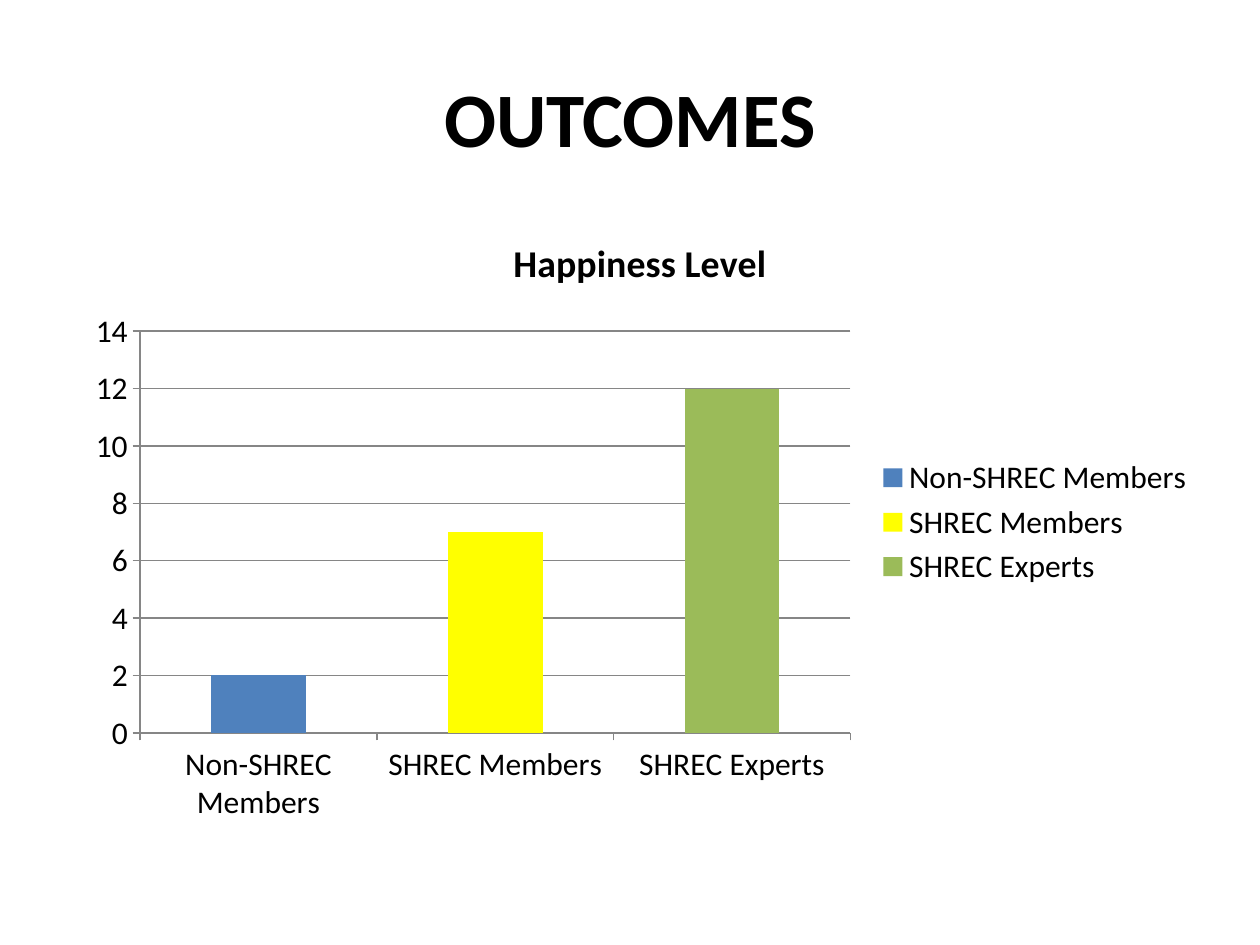
from dataclasses import dataclass

from pptx import Presentation
from pptx.chart.data import CategoryChartData
from pptx.dml.color import RGBColor
from pptx.enum.chart import XL_CHART_TYPE, XL_LEGEND_POSITION, XL_TICK_MARK
from pptx.enum.text import MSO_ANCHOR, PP_ALIGN
from pptx.util import Inches, Pt


@dataclass(frozen=True)
class Theme:
    font: str = "Calibri"
    text: str = "000000"
    line: str = "868686"
    title_size: float = 44
    chart_title_size: float = 21.6
    chart_size: float = 18


@dataclass(frozen=True)
class Bar:
    label: str
    value: int
    color: str


THEME = Theme()
BARS = [
    Bar("Non-SHREC Members", 2, "4F81BD"),
    Bar("SHREC Members", 7, "FFFF00"),
    Bar("SHREC Experts", 12, "9BBB59"),
]


def style_font(font, size: float, bold: bool = False) -> None:
    for name, value in {"name": THEME.font, "size": Pt(size), "bold": bold}.items():
        setattr(font, name, value)
    font.color.rgb = RGBColor.from_string(THEME.text)


def style_line(line) -> None:
    line.color.rgb = RGBColor.from_string(THEME.line)
    line.width = Pt(0.75)


def place(box, left: float, top: float, width: float, height: float) -> None:
    lengths = {"left": left, "top": top, "width": width, "height": height}
    for name, value in lengths.items():
        setattr(box, name, Inches(value))


def add_title(page, text: str) -> None:
    box = page.shapes.title
    place(box, 0.5, 0.3, 9, 1.25)
    box.text_frame.vertical_anchor = MSO_ANCHOR.MIDDLE
    para = box.text_frame.paragraphs[0]
    para.alignment = PP_ALIGN.CENTER
    span = para.add_run()
    span.text = text
    style_font(span.font, THEME.title_size, bold=True)


def add_bar_chart(page, title: str, bars: list[Bar]) -> None:
    data = CategoryChartData()
    data.categories = [bar.label for bar in bars]
    data.add_series(title, [bar.value for bar in bars])
    chart = page.shapes.add_chart(
        XL_CHART_TYPE.COLUMN_CLUSTERED,
        Inches(0.58), Inches(1.67), Inches(9), Inches(4.95), data,
    ).chart
    style_font(chart.font, THEME.chart_size)

    # Chart title
    chart.has_title = True
    chart.chart_title.include_in_layout = False
    span = chart.chart_title.text_frame.paragraphs[0].add_run()
    span.text = title
    style_font(span.font, THEME.chart_title_size, bold=True)

    # Legend with one entry per bar
    chart.has_legend = True
    chart.legend.position = XL_LEGEND_POSITION.RIGHT
    chart.legend.include_in_layout = False

    # Axes and gridlines
    for axis in (chart.category_axis, chart.value_axis):
        axis.major_tick_mark = XL_TICK_MARK.OUTSIDE
        style_line(axis.format.line)
    chart.value_axis.has_major_gridlines = True
    style_line(chart.value_axis.major_gridlines.format.line)

    # Bars
    plot = chart.plots[0]
    plot.vary_by_categories = True
    plot.gap_width = 150
    for index, bar in enumerate(bars):
        fill = plot.series[0].points[index].format.fill
        fill.solid()
        fill.fore_color.rgb = RGBColor.from_string(bar.color)


def main() -> None:
    deck = Presentation()
    deck.slide_width, deck.slide_height = Inches(10), Inches(7.5)
    page = deck.slides.add_slide(deck.slide_layouts.get_by_name("Title Only"))
    add_title(page, "OUTCOMES")
    add_bar_chart(page, "Happiness Level", BARS)
    deck.save("out.pptx")


if __name__ == "__main__":
    main()
